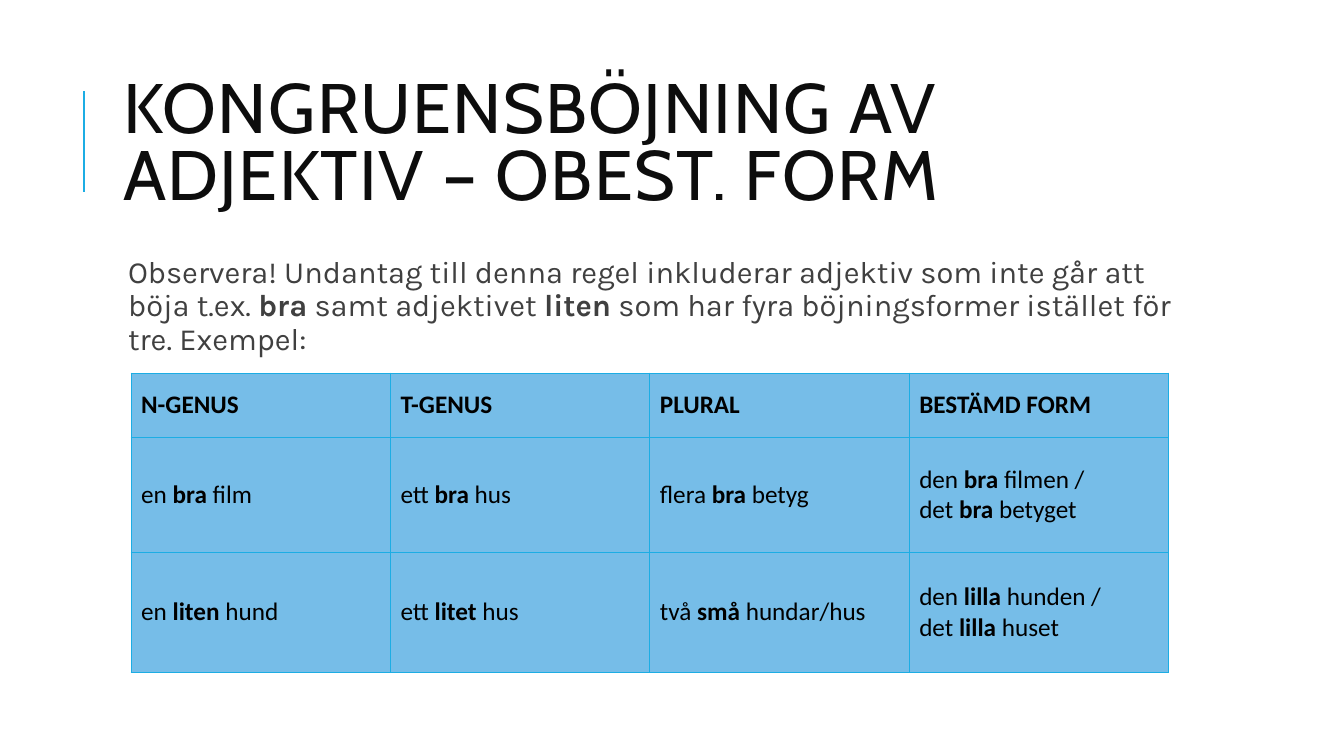
from lxml import etree
from pptx import Presentation
from pptx.dml.color import RGBColor
from pptx.enum.shapes import MSO_CONNECTOR
from pptx.enum.text import MSO_ANCHOR, MSO_AUTO_SIZE, PP_ALIGN
from pptx.oxml.ns import qn
from pptx.util import Inches, Pt

STRAIGHT = MSO_CONNECTOR.STRAIGHT
MIDDLE, TOP = MSO_ANCHOR.MIDDLE, MSO_ANCHOR.TOP
LEFT = PP_ALIGN.LEFT
NO_FIT = MSO_AUTO_SIZE.NONE

ACCENT, CELL_FILL = "1CADE4", "76BDE8"
BORDER_POINTS = 0.75

TITLE = "KONGRUENSBÖJNING AV ADJEKTIV – OBEST. FORM"
INTRO = (
    "Observera! Undantag till denna regel inkluderar adjektiv som inte går att "
    "böja t.ex. **bra** samt adjektivet **liten** som har fyra böjningsformer "
    "istället för tre. Exempel:"
)
FORMS = [
    ["**N-GENUS**", "**T-GENUS**", "**PLURAL**", "**BESTÄMD FORM**"],
    ["en **bra** film", "ett **bra** hus", "flera **bra** betyg",
     "den **bra** filmen /\ndet **bra** betyget"],
    ["en **liten** hund", "ett **litet** hus", "två **små** hundar/hus",
     "den **lilla** hunden /\ndet **lilla** huset"],
]
TABLE_LEFT, TABLE_TOP, TABLE_WIDTH = 1.3, 3.7, 10.29
ROW_HEIGHTS = [0.64, 1.14, 1.19]


def color(value):
    return RGBColor.from_string(value)


def write(frame, text, *, font, size, fill, line_spacing=1.0, tracking=0):
    for index, line in enumerate(text.split("\n")):
        paragraph = frame.add_paragraph() if index else frame.paragraphs[0]
        paragraph.alignment = LEFT
        paragraph.line_spacing = line_spacing
        paragraph.space_before = Pt(0)
        for part, words in enumerate(line.split("**")):
            if not words:
                continue
            run = paragraph.add_run()
            run.text = words
            run.font.name = font
            run.font.size = Pt(size)
            run.font.bold = part % 2 == 1
            run.font.color.rgb = color(fill)
            if tracking:
                run.font._element.set("spc", str(tracking * 100))


def place(shape, left, top, width, height, anchor):
    shape.left, shape.top = Inches(left), Inches(top)
    shape.width, shape.height = Inches(width), Inches(height)
    frame = shape.text_frame
    frame.word_wrap = True
    frame.auto_size = NO_FIT
    frame.vertical_anchor = anchor
    return frame


def set_borders(cell):
    properties = cell._tc.get_or_add_tcPr()
    for position, side in enumerate(("lnL", "lnR", "lnT", "lnB")):
        border = etree.Element(qn(f"a:{side}"), w=str(Pt(BORDER_POINTS)))
        solid = etree.SubElement(border, qn("a:solidFill"))
        etree.SubElement(solid, qn("a:srgbClr"), val=ACCENT)
        properties.insert(position, border)


def add_title(slide):
    accent = slide.shapes.add_connector(
        STRAIGHT, Inches(0.83), Inches(1.9), Inches(0.83), Inches(0.9))
    accent.line.color.rgb = color(ACCENT)
    accent.line.width = Pt(1.5)
    etree.SubElement(accent._element.spPr, qn("a:effectLst"))
    frame = place(slide.shapes.title, 1.12, 0.64, 10.93, 1.64, MIDDLE)
    write(frame, TITLE, font="Cabin", size=50, fill="0D0D0D",
          line_spacing=0.8, tracking=1)


def add_intro(slide):
    frame = place(slide.placeholders[1], 1.12, 2.5, 10.63, 4.4, TOP)
    frame.margin_left = frame.margin_right = Inches(0.05)
    frame.margin_top = frame.margin_bottom = Inches(0.05)
    properties = frame.paragraphs[0]._p.get_or_add_pPr()
    properties.set("marL", str(Inches(0.1)))
    properties.set("indent", str(Inches(-0.1)))
    etree.SubElement(properties, qn("a:buChar"), char=" ")
    write(frame, INTRO, font="Karla", size=22, fill="404040", line_spacing=0.9)
    frame.paragraphs[0].space_after = Pt(2)


def add_forms(slide):
    column_count = len(FORMS[0])
    table = slide.shapes.add_table(
        len(FORMS), column_count, Inches(TABLE_LEFT), Inches(TABLE_TOP),
        Inches(TABLE_WIDTH), Inches(sum(ROW_HEIGHTS))).table
    for column in table.columns:
        column.width = Inches(TABLE_WIDTH / column_count)
    for row, height in zip(table.rows, ROW_HEIGHTS):
        row.height = Inches(height)
    for row, texts in zip(table.rows, FORMS):
        for cell, text in zip(row.cells, texts):
            cell.fill.solid()
            cell.fill.fore_color.rgb = color(CELL_FILL)
            cell.vertical_anchor = MIDDLE
            set_borders(cell)
            write(cell.text_frame, text, font="Calibri", size=18, fill="000000")


def main():
    presentation = Presentation()
    presentation.slide_width = Inches(13.33)
    presentation.slide_height = Inches(7.5)
    slide = presentation.slides.add_slide(presentation.slide_layouts[1])
    add_title(slide)
    add_intro(slide)
    add_forms(slide)
    presentation.save("out.pptx")


if __name__ == "__main__":
    main()
